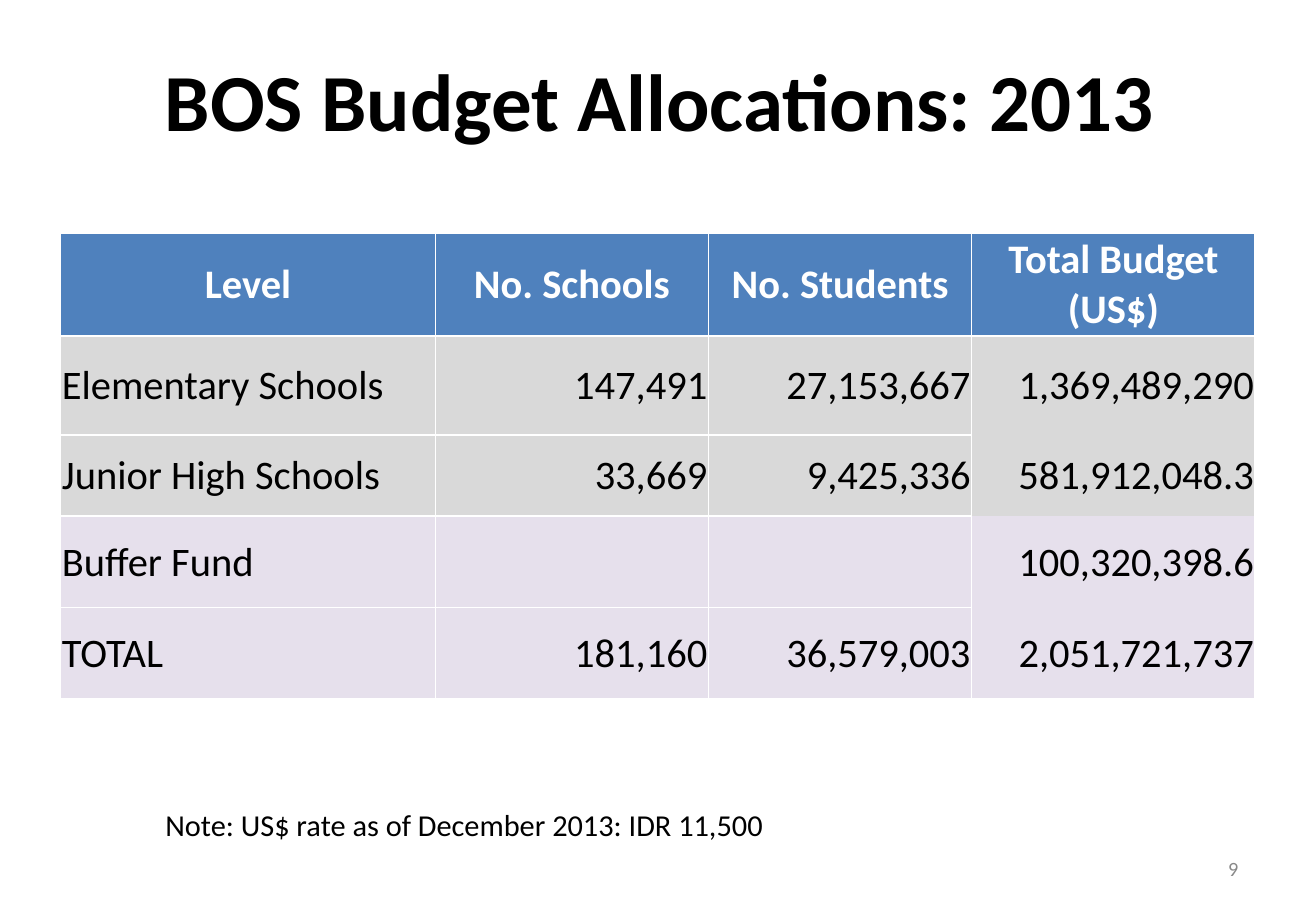
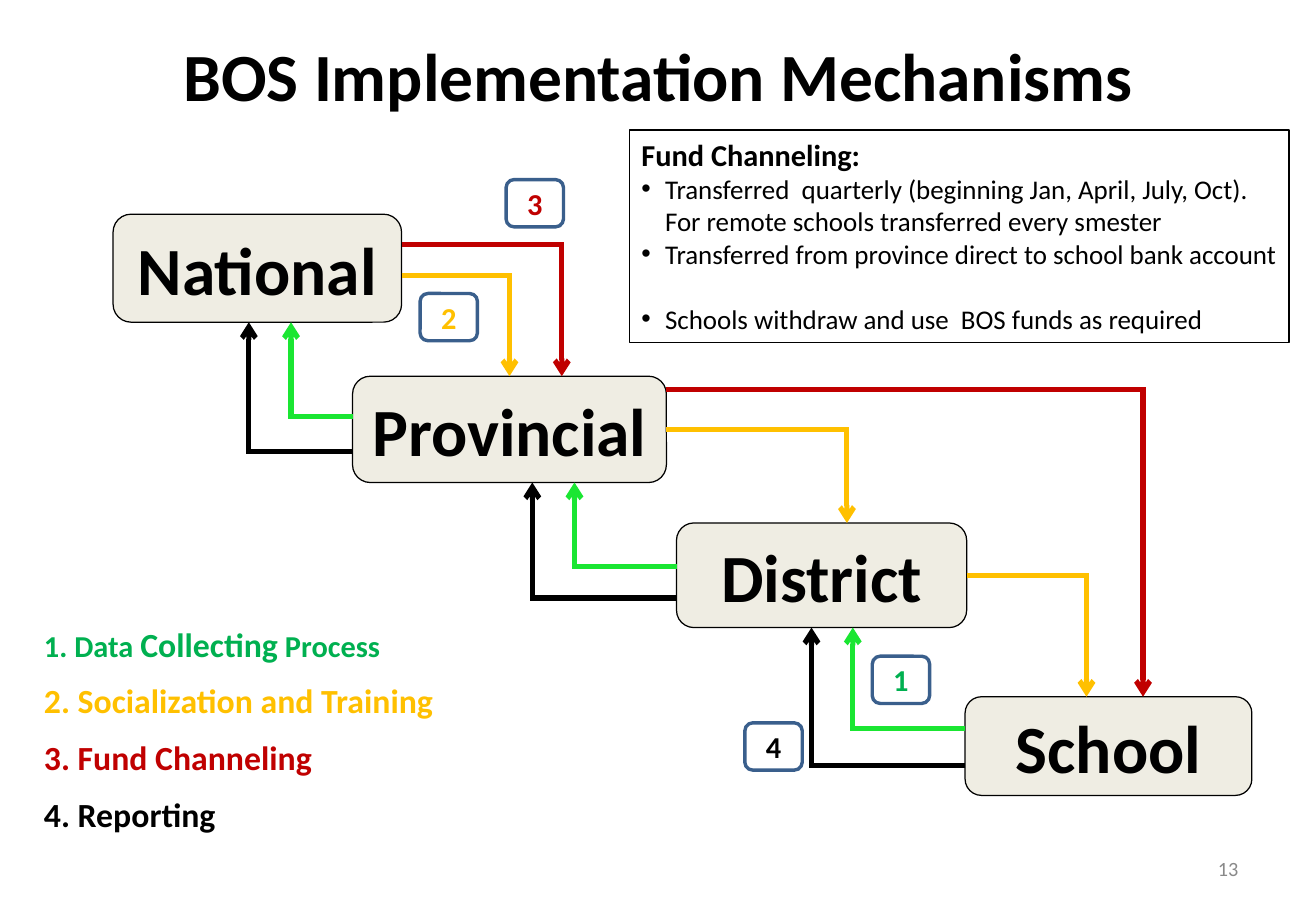
from dataclasses import dataclass
from typing import Any

from lxml import etree
from pptx import Presentation
from pptx.dml.color import RGBColor
from pptx.enum import shapes, text
from pptx.oxml import ns
from pptx.util import Pt

FONT = "Calibri"
COLORS = {
    "black": "000000", "white": "FFFFFF", "grey": "898989",
    "header": "4F81BD", "level": "D9D9D9", "sum": "E6E0EC",
    "box": "EEECE1", "badge": "3A5F8C",
    "green": "00B050", "lime": "1AE632", "gold": "FFC000", "red": "C00000",
}
LEFT, CENTER, RIGHT = text.PP_ALIGN.LEFT, text.PP_ALIGN.CENTER, text.PP_ALIGN.RIGHT
TOP, MIDDLE = text.MSO_ANCHOR.TOP, text.MSO_ANCHOR.MIDDLE
NO_STYLE = "{2D5ABB26-0587-4C30-8999-92F81FD0307C}"
LINE_WIDTH = 3


@dataclass(frozen=True)
class Box:
    x: float
    y: float
    w: float
    h: float

    @property
    def right(self) -> float:
        return self.x + self.w

    @property
    def bottom(self) -> float:
        return self.y + self.h

    @property
    def mid_x(self) -> float:
        return self.x + self.w / 2

    @property
    def mid_y(self) -> float:
        return self.y + self.h / 2


@dataclass(frozen=True)
class Route:
    source: str
    target: str
    y: float
    x: float
    color: str


@dataclass(frozen=True)
class Badge:
    label: str
    x: float
    y: float
    color: str


LEVELS = {
    "National": Box(67, 127, 171, 64),
    "Provincial": Box(209, 223, 186, 63),
    "District": Box(401, 310, 172, 62),
    "School": Box(572, 413, 170, 58.5),
}
ROUTES = [
    Route("National", "Provincial", 163.5, 302, "gold"),
    Route("National", "Provincial", 145, 333, "red"),
    Route("Provincial", "School", 231, 677.5, "red"),
    Route("District", "School", 341, 644, "gold"),
    Route("Provincial", "National", 247, 172.5, "lime"),
    Route("Provincial", "National", 267.5, 147.5, "black"),
    Route("District", "Provincial", 336, 340.5, "lime"),
    Route("District", "Provincial", 354.5, 315.5, "black"),
    Route("School", "District", 432, 505.5, "lime"),
    Route("School", "District", 453.5, 481, "black"),
    Route("Provincial", "District", 254.5, 502, "gold"),
]
BADGES = [
    Badge("1", 517, 389, "green"),
    Badge("2", 249, 174, "gold"),
    Badge("3", 300, 106.5, "red"),
    Badge("4", 441.5, 428.5, "black"),
]
LEGEND = [
    ([("1. Data ", 18), ("Collecting", 20), (" Process", 18)], "green"),
    ([("2. Socialization and Training", 20)], "gold"),
    ([("3. Fund Channeling", 20)], "red"),
    ([("4. Reporting", 20)], "black"),
]
FUND_POINTS = [
    ("Transferred  quarterly (beginning Jan, April, July, Oct). "
     "For remote schools transferred every smester", 0),
    ("Transferred from province direct to school bank account", 19.5),
    ("Schools withdraw and use  BOS funds as required", 0),
]
COLUMNS = [222, 162, 156, 168]
ROWS = [
    (61, "header", ["Level", "No. Schools", "No. Students", "Total Budget (US$)"]),
    (59, "level", ["Elementary Schools", "147,491", "27,153,667", "1,369,489,290"]),
    (48, "level", ["Junior High Schools", "33,669", "9,425,336", "581,912,048.3"]),
    (54, "sum", ["Buffer Fund", "", "", "100,320,398.6"]),
    (54, "sum", ["TOTAL", "181,160", "36,579,003", "2,051,721,737"]),
]


def rgb(name: str) -> RGBColor:
    return RGBColor.from_string(COLORS[name])


def write(p: Any, content: str, *, size: float, color: str = "black",
          bold: bool = False, align: Any = LEFT) -> None:
    p.alignment = align
    r = p.add_run()
    r.text = content
    r.font.name = FONT
    r.font.size = Pt(size)
    r.font.bold = bold
    r.font.color.rgb = rgb(color)


def place(sp: Any, box: Box) -> None:
    sp.left, sp.top, sp.width, sp.height = map(Pt, (box.x, box.y, box.w, box.h))


def add_text(s: Any, box: Box, anchor: Any = TOP, wrap: bool = True) -> Any:
    sp = s.shapes.add_textbox(Pt(box.x), Pt(box.y), Pt(box.w), Pt(box.h))
    sp.text_frame.word_wrap = wrap
    sp.text_frame.vertical_anchor = anchor
    return sp.text_frame.paragraphs[0]


def add_frame(s: Any, prs: Any, layout: int, title: str, size: float,
              box: Box, number: str) -> Any:
    s = prs.slides.add_slide(prs.slide_layouts[layout])
    place(s.shapes.title, box)
    tf = s.shapes.title.text_frame
    tf.vertical_anchor = MIDDLE
    write(tf.paragraphs[0], title, size=size, bold=True, align=CENTER)
    p = add_text(s, Box(559, 500.5, 182, 29), MIDDLE)
    write(p, number, size=12, color="grey", align=RIGHT)
    return s


def add_node(s: Any, kind: Any, box: Box, label: str, *, size: float, color: str,
             line: str, width: float, fill: str = "") -> Any:
    sp = s.shapes.add_shape(kind, Pt(box.x), Pt(box.y), Pt(box.w), Pt(box.h))
    sp.shadow.inherit = False
    sp.line.color.rgb = rgb(line)
    sp.line.width = Pt(width)
    if fill:
        sp.fill.solid()
        sp.fill.fore_color.rgb = rgb(fill)
        clr = sp.fill._xPr.find(ns.qn("a:solidFill"))[0]
        etree.SubElement(clr, ns.qn("a:alpha")).set("val", "90000")
    else:
        sp.fill.background()
    tf = sp.text_frame
    tf.word_wrap = not fill
    tf.vertical_anchor = MIDDLE
    write(tf.paragraphs[0], label, size=size, color=color, bold=True, align=CENTER)
    return sp


def add_line(s: Any, x1: float, y1: float, x2: float, y2: float, color: str,
             arrow: bool = False) -> Any:
    c = s.shapes.add_connector(shapes.MSO_CONNECTOR.STRAIGHT, Pt(x1), Pt(y1), Pt(x2), Pt(y2))
    c.line.color.rgb = rgb(color)
    c.line.width = Pt(LINE_WIDTH)
    if arrow:
        ln = c.line._get_or_add_ln()
        etree.SubElement(ln, ns.qn("a:tailEnd")).set("type", "arrow")
    etree.SubElement(c._element.spPr, ns.qn("a:effectLst"))
    return c


def add_route(s: Any, route: Route, nodes: dict[str, Any]) -> None:
    src, dst = LEVELS[route.source], LEVELS[route.target]
    down = dst.y > src.y
    start_x, end_y = (src.right, dst.y) if down else (src.x, dst.bottom)
    overlap = LINE_WIDTH / 2 if down else -LINE_WIDTH / 2
    out = add_line(s, start_x, route.y, route.x + overlap, route.y, route.color)
    into = add_line(s, route.x, route.y, route.x, end_y, route.color, True)
    if route.y == src.mid_y:
        out.begin_connect(nodes[route.source], 3 if down else 1)
    if route.x == dst.mid_x:
        into.end_connect(nodes[route.target], 0 if down else 2)


def set_border(cell: Any, side: str, width: float) -> None:
    ln = etree.SubElement(cell._tc.get_or_add_tcPr(), ns.qn(f"a:ln{side}"))
    ln.set("w", str(Pt(width)))
    if width:
        fill = etree.SubElement(ln, ns.qn("a:solidFill"))
        etree.SubElement(fill, ns.qn("a:srgbClr")).set("val", COLORS["white"])
    else:
        etree.SubElement(ln, ns.qn("a:noFill"))


def add_budget_table(s: Any) -> None:
    height = sum(row[0] for row in ROWS)
    table = s.shapes.add_table(len(ROWS), len(COLUMNS), Pt(36), Pt(138),
                               Pt(sum(COLUMNS)), Pt(height)).table
    table._tbl.tblPr.find(ns.qn("a:tableStyleId")).text = NO_STYLE
    table.horz_banding = False
    for j, width in enumerate(COLUMNS):
        table.columns[j].width = Pt(width)
    for i, (row_height, fill, values) in enumerate(ROWS):
        table.rows[i].height = Pt(row_height)
        for j, value in enumerate(values):
            cell = table.cell(i, j)
            cell.margin_left = cell.margin_right = cell.margin_top = Pt(0.7)
            cell.margin_bottom = 0
            cell.vertical_anchor = MIDDLE
            inner = 0 if j == len(COLUMNS) - 1 else 1
            above = {0: 1, 1: 1.5}.get(i, inner)
            below = 1.5 if i == 0 else inner
            for side, width in zip("LRTB", (1, 1, above, below)):
                set_border(cell, side, width)
            cell.fill.solid()
            cell.fill.fore_color.rgb = rgb(fill)
            head = i == 0
            if value:
                write(cell.text_frame.paragraphs[0], value, size=24, bold=head,
                      color="white" if head else "black",
                      align=CENTER if head else RIGHT if j else LEFT)


def add_fund_list(s: Any) -> None:
    sp = s.placeholders[1]
    place(sp, Box(373, 77, 391, 126))
    sp.line.color.rgb = rgb("black")
    sp.line.width = Pt(0.75)
    tf = sp.text_frame
    tf.auto_size = text.MSO_AUTO_SIZE.NONE
    tf.vertical_anchor = TOP
    tf.margin_right = Pt(4)
    head = tf.paragraphs[0]
    pPr = head._p.get_or_add_pPr()
    pPr.set("marL", "0")
    pPr.set("indent", "0")
    head.space_before = Pt(0)
    etree.SubElement(pPr, ns.qn("a:buNone"))
    write(head, "Fund Channeling:", size=18, bold=True)
    for content, gap in FUND_POINTS:
        p = tf.add_paragraph()
        pPr = p._p.get_or_add_pPr()
        pPr.set("marL", str(Pt(14)))
        pPr.set("indent", str(Pt(-14)))
        p.space_before = Pt(0)
        p.space_after = Pt(gap)
        etree.SubElement(pPr, ns.qn("a:buChar")).set("char", "•")
        write(p, content, size=16)


def build_budget(prs: Any) -> None:
    s = add_frame(None, prs, 5, "BOS Budget Allocations: 2013", 48,
                  Box(69, 26, 644, 66), "9")
    add_budget_table(s)
    p = add_text(s, Box(91, 474, 374, 51), wrap=False)
    write(p, "Note: US$ rate as of December 2013: IDR 11,500", size=18)


def build_mechanisms(prs: Any) -> None:
    s = add_frame(None, prs, 1, "BOS Implementation Mechanisms", 40,
                  Box(0, 15, 780, 58), "13")
    add_fund_list(s)
    nodes = {
        name: add_node(s, shapes.MSO_SHAPE.FLOWCHART_ALTERNATE_PROCESS, box, name,
                       size=40, color="black", line="black", width=0.75, fill="box")
        for name, box in LEVELS.items()
    }
    for i, (parts, color) in enumerate(LEGEND):
        p = add_text(s, Box(19, 366 + 33.6 * i, 252, 31.5))
        for content, size in parts:
            write(p, content, size=size, color=color, bold=True)
    for badge in BADGES:
        add_node(s, shapes.MSO_SHAPE.ROUNDED_RECTANGLE, Box(badge.x, badge.y, 34, 28),
                 badge.label, size=18, color=badge.color, line="badge", width=2)
    for route in ROUTES:
        add_route(s, route, nodes)


def main() -> None:
    prs = Presentation()
    prs.slide_width, prs.slide_height = Pt(780), Pt(540)
    build_budget(prs)
    build_mechanisms(prs)
    prs.save("out.pptx")


if __name__ == "__main__":
    main()
